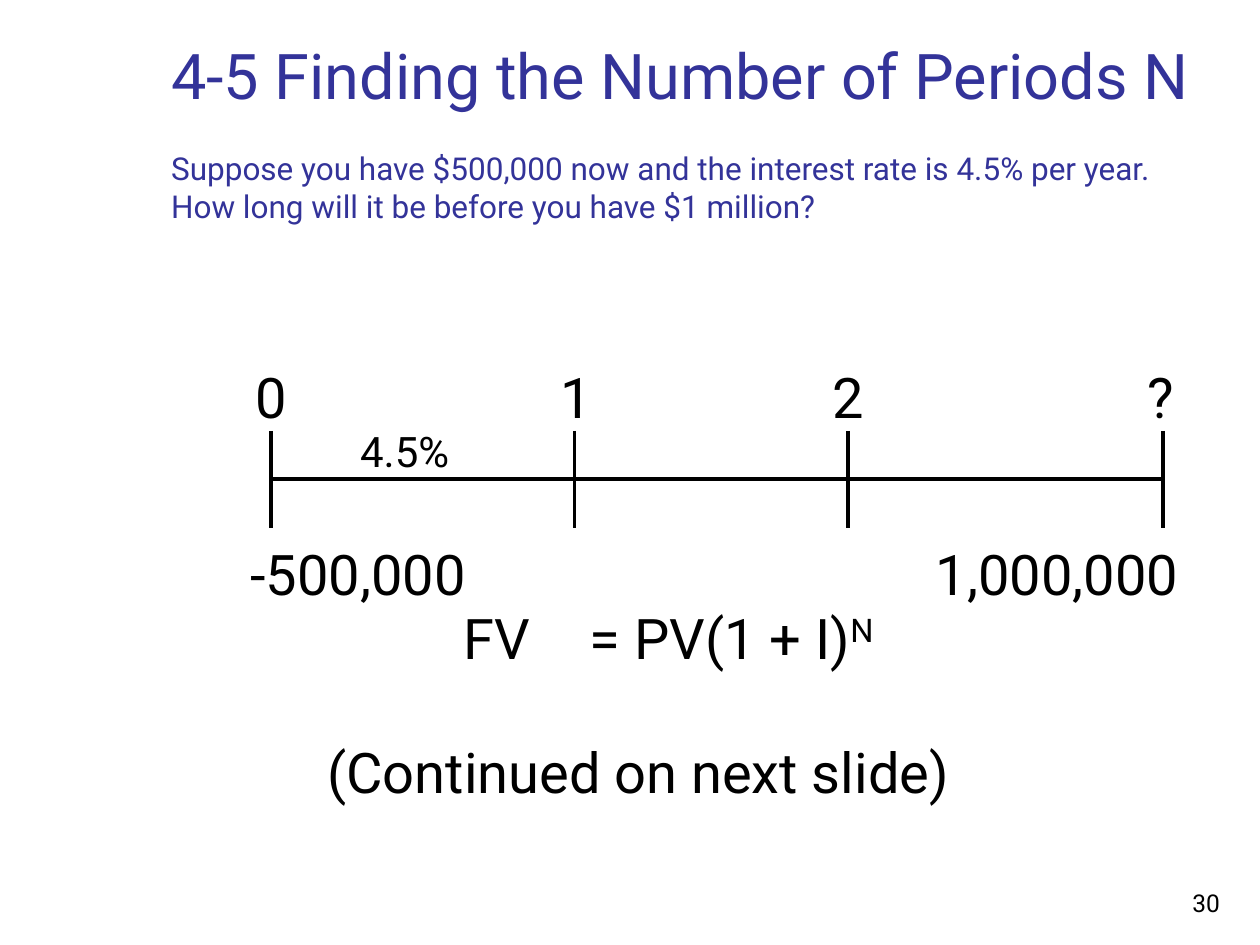
from lxml import etree
from pptx import Presentation
from pptx.dml.color import RGBColor
from pptx.enum import shapes, text
from pptx.oxml.ns import qn
from pptx.util import Inches, Pt

FONT = "Roboto"
BLACK, BLUE = "000000", "333399"
AXIS_TOP, AXIS_MIDDLE, AXIS_BOTTOM = 3.42, 3.8, 4.19
# Label, tick position and left edge of the label
PERIODS = [("0", 2.15, 1.93), ("1", 4.56, 4.35), ("2", 6.73, 6.51), ("?", 9.23, 9.01)]


def color(value):
    return RGBColor.from_string(value)


def add_run(paragraph, words, size, fill=BLACK):
    run = paragraph.add_run()
    run.text = words
    run.font.name = FONT
    run.font.size = Pt(size)
    run.font.color.rgb = color(fill)
    return run


def add_box(slide, left, top, width, height, wrap=True, anchor=text.MSO_ANCHOR.TOP):
    box = slide.shapes.add_textbox(Inches(left), Inches(top), Inches(width), Inches(height))
    frame = box.text_frame
    frame.word_wrap = wrap
    frame.vertical_anchor = anchor
    return frame


def add_label(slide, words, left, top, width, height, size=32):
    frame = add_box(slide, left, top, width, height, wrap=False)
    add_run(frame.paragraphs[0], words, size)


def add_line(slide, x1, y1, x2, y2):
    line = slide.shapes.add_connector(
        shapes.MSO_CONNECTOR.STRAIGHT, Inches(x1), Inches(y1), Inches(x2), Inches(y2))
    line.line.color.rgb = color(BLACK)
    line.line.width = Pt(2)
    etree.SubElement(line._element.spPr, qn("a:effectLst"))


def indent_with_tab(paragraph, indent, position):
    properties = paragraph._p.get_or_add_pPr()
    properties.set("marL", str(Inches(indent)))
    properties.set("indent", "0")
    tabs = etree.SubElement(properties, qn("a:tabLst"))
    etree.SubElement(tabs, qn("a:tab"), pos=str(Inches(position)), algn="l")


def add_title(slide):
    frame = add_box(slide, 1.26, 0.23, 8.52, 1.6, anchor=text.MSO_ANCHOR.BOTTOM)
    add_run(frame.paragraphs[0], "4-5 Finding the Number of Periods N", 36, BLUE)
    question = frame.add_paragraph()
    question.space_before = Pt(21)
    add_run(question, "Suppose you have $500,000 now and the interest rate is 4.5% per year. "
            "How long will it be before you have $1 million?", 18, BLUE)


def add_timeline(slide):
    for label, tick, left in PERIODS:
        add_line(slide, tick, AXIS_TOP, tick, AXIS_BOTTOM)
        add_label(slide, label, left, 2.83, 0.44, 0.63)
    add_line(slide, PERIODS[0][1], AXIS_MIDDLE, PERIODS[-1][1], AXIS_MIDDLE)
    add_label(slide, "4.5%", 2.76, 3.33, 0.99, 0.5, size=24)
    add_label(slide, "-500,000", 1.89, 4.23, 1.97, 0.64)
    add_label(slide, "1,000,000", 7.33, 4.23, 2.25, 0.64)


def add_formula(slide):
    frame = add_box(slide, 2.5, 4.74, 5.4, 1.72)
    formula = frame.paragraphs[0]
    indent_with_tab(formula, 1.08, 1.88)
    add_run(formula, "FV\t= PV(1 + I)", 32)
    exponent = add_run(formula, "N", 32)
    exponent.font._element.set("baseline", "30000")
    note = frame.add_paragraph()
    note.space_before = Pt(38)
    add_run(note, "(Continued on next slide)", 32)


def add_page_number(slide):
    frame = add_box(slide, 7.7, 6.83, 2.08, 0.5, anchor=text.MSO_ANCHOR.BOTTOM)
    paragraph = frame.paragraphs[0]
    paragraph.alignment = text.PP_ALIGN.RIGHT
    add_run(paragraph, "30", 14)


def main():
    presentation = Presentation()
    presentation.slide_width = Inches(10)
    presentation.slide_height = Inches(7.5)
    slide = presentation.slides.add_slide(presentation.slide_layouts[6])

    # Heading and question
    add_title(slide)
    # Cash flows over time
    add_timeline(slide)
    # Equation and closing note
    add_formula(slide)
    add_page_number(slide)

    presentation.save("out.pptx")


if __name__ == "__main__":
    main()
